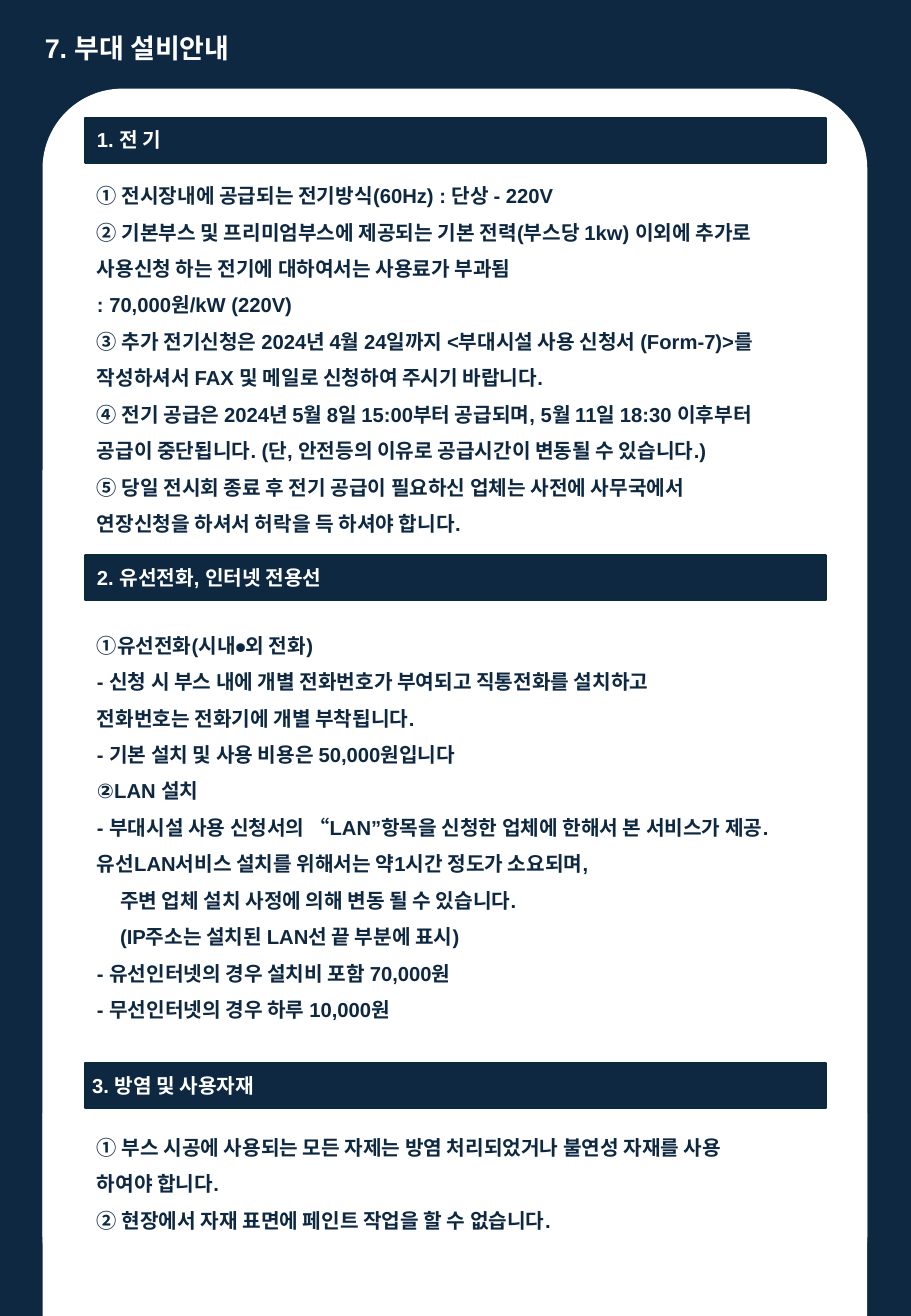
"""Build the booth utilities guide page."""
import pptx
import pptx.util
import pptx.dml.color
import pptx.enum.shapes
import pptx.enum.text

Inches = pptx.util.Inches
Pt = pptx.util.Pt
RGBColor = pptx.dml.color.RGBColor
SHAPE = pptx.enum.shapes.MSO_SHAPE
FIT = pptx.enum.text.MSO_AUTO_SIZE

NAVY = RGBColor(0x0E, 0x28, 0x41)
EDGE = RGBColor(0x09, 0x2A, 0x39)
WHITE = RGBColor(0xFF, 0xFF, 0xFF)

WIDE, TALL = 7.5, 10.83
LEFT, BAR_W, BAR_H = 0.7, 6.1, 0.37
INDENT = 0.19

TITLE = "7. 부대 설비안내"
POWER = [
    "① 전시장내에 공급되는 전기방식(60Hz) : 단상 - 220V",
    "② 기본부스 및 프리미엄부스에 제공되는 기본 전력(부스당 1kw) 이외에 추가로",
    "사용신청 하는 전기에 대하여서는 사용료가 부과됨",
    ": 70,000원/kW (220V)",
    "③ 추가 전기신청은 2024년 4월 24일까지 <부대시설 사용 신청서 (Form-7)>를 \v"
    "작성하셔서 FAX 및 메일로 신청하여 주시기 바랍니다.",
    "④ 전기 공급은 2024년 5월 8일 15:00부터 공급되며, 5월 11일 18:30 이후부터",
    "공급이 중단됩니다. (단, 안전등의 이유로 공급시간이 변동될 수 있습니다.)",
    "⑤ 당일 전시회 종료 후 전기 공급이 필요하신 업체는 사전에 사무국에서",
    "연장신청을 하셔서 허락을 득 하셔야 합니다.",
]
PHONE = [
    "①유선전화(시내⦁외 전화)",
    "- 신청 시 부스 내에 개별 전화번호가 부여되고 직통전화를 설치하고",
    "전화번호는 전화기에 개별 부착됩니다.",
    "- 기본 설치 및 사용 비용은 50,000원입니다",
    "②LAN 설치",
    "- 부대시설 사용 신청서의 “LAN”항목을 신청한 업체에 한해서 본 서비스가 제공.",
    "유선LAN서비스 설치를 위해서는 약1시간 정도가 소요되며,",
    "\t주변 업체 설치 사정에 의해 변동 될 수 있습니다.",
    "\t(IP주소는 설치된 LAN선 끝 부분에 표시)",
    "- 유선인터넷의 경우 설치비 포함 70,000원",
    "- 무선인터넷의 경우 하루 10,000원",
]
FLAME = [
    "① 부스 시공에 사용되는 모든 자제는 방염 처리되었거나 불연성 자재를 사용",
    "하여야 합니다.",
    "② 현장에서 자재 표면에 페인트 작업을 할 수 없습니다.",
]
PARTS = [
    (0.97, "1. 전 기", (0.7, 0.8), POWER, (1.36, 6.3, 3.09), False),
    (4.57, "2. 유선전화, 인터넷 전용선", (0.7, 2.23), PHONE, (5.06, 5.88, 3.4), False),
    (8.75, "3. 방염 및 사용자재", (0.66, 1.7), FLAME, (9.19, 6.1, 1.28), True),
]


def add_block(slide, kind, box, fill, line=None):
    shape = slide.shapes.add_shape(kind, *map(Inches, box))
    shape.shadow.inherit = False
    shape.fill.solid()
    shape.fill.fore_color.rgb = fill
    if line is None:
        shape.line.fill.background()
    else:
        shape.line.color.rgb = line
        shape.line.width = Pt(1.5)
    return shape


def add_text(slide, box, lines, color, size=12, space=None, wrap=False):
    frame = slide.shapes.add_textbox(*map(Inches, box)).text_frame
    frame.word_wrap = wrap
    frame.auto_size = FIT.SHAPE_TO_FIT_TEXT
    for i, line in enumerate(lines):
        para = frame.paragraphs[0] if i == 0 else frame.add_paragraph()
        para.text = line.lstrip("\t")
        if line.startswith("\t"):
            para._p.get_or_add_pPr().set("marL", str(Inches(INDENT)))
        if space:
            para.line_spacing = space
        font = para.font
        font.name, font.size, font.bold = "Arial", Pt(size), True
        font.color.rgb = color


def main():
    deck = pptx.Presentation()
    deck.slide_width, deck.slide_height = Inches(WIDE), Inches(TALL)
    slide = deck.slides.add_slide(deck.slide_layouts[6])

    add_block(slide, SHAPE.RECTANGLE, (0, 0, WIDE, TALL), NAVY)
    panel = add_block(slide, SHAPE.ROUNDED_RECTANGLE, (0.35, 0.73, 6.79, 10.1), WHITE)
    panel.adjustments[0] = 0.097
    add_block(slide, SHAPE.RECTANGLE, (0.35, 9.16, 6.79, 1.67), WHITE)
    add_text(slide, (0.27, 0.21, 1.89, 0.37), [TITLE], WHITE, 16)

    for top, head, (x, width), lines, (y, w, h), wrap in PARTS:
        add_block(slide, SHAPE.RECTANGLE, (LEFT, top, BAR_W, BAR_H), NAVY, EDGE)
        add_text(slide, (x, top + 0.03, width, 0.3), [head], WHITE)
        add_text(slide, (LEFT, y, w, h), lines, NAVY, space=1.5, wrap=wrap)

    deck.save("out.pptx")


if __name__ == "__main__":
    main()
